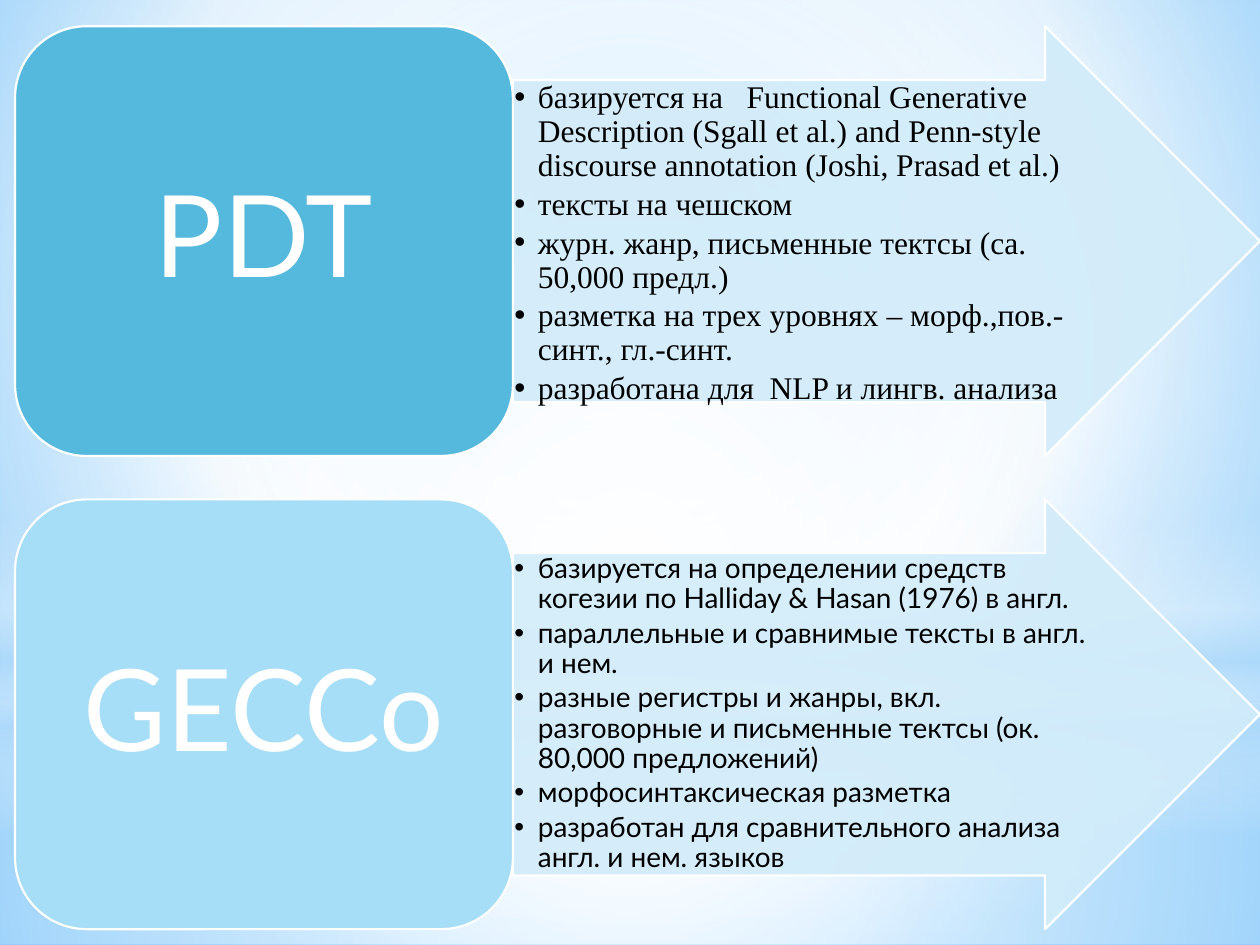
from lxml.etree import SubElement
from pptx import Presentation
from pptx.dml.color import RGBColor
from pptx.enum.shapes import MSO_SHAPE
from pptx.enum.text import MSO_ANCHOR, MSO_AUTO_SIZE, PP_ALIGN
from pptx.oxml.ns import qn
from pptx.util import Pt

COLORS = {
    "white": "FFFFFF", "black": "000000", "pale": "B4DCFA",
    "sky": "9ED5FF", "edge": "5BB9FF", "arrow": "D2ECFA",
    "teal": "55B9DD", "light": "A6DDF7",
}
CENTER = (50, 50, 50, 50)

# Background layers: preset, box, stops (position, colour, opacity), focus
LAYERS = [
    (MSO_SHAPE.RECTANGLE, (0, 402, 720, 138),
     [(0, "white", 91), (37, "white", 76), (100, "pale", 79)], CENTER),
    (MSO_SHAPE.RECTANGLE, (0, 0, 720, 402),
     [(0, "white", 89), (48, "white", 62), (100, "pale", 79)], CENTER),
    (MSO_SHAPE.RECTANGLE, (0, 296.6, 720, 180),
     [(0, "white", 0), (29, "white", 30), (45, "pale", 40),
      (55, "white", 26), (65, "pale", 60), (100, "white", 0)], None),
    (MSO_SHAPE.OVAL, (0, 126, 720, 402),
     [(0, "white", 100), (56, "white", 0)], CENTER),
]

# Corpora: name, tile colour, list font, list size, label and list placeholders
CORPORA = [
    ("PDT", "teal", "Times New Roman", 18, 1, 2, [
        "базируется на   Functional Generative Description (Sgall et al.) "
        "and Penn-style discourse annotation (Joshi, Prasad et al.)",
        "тексты на чешском",
        "журн. жанр, письменные тектсы (ca. 50,000 предл.)",
        "разметка на трех уровнях – морф.,пов.-синт., гл.-синт.",
        "разработана для  NLP и лингв. анализа",
    ]),
    ("GECCo", "light", "Lato", 16, 3, 4, [
        "базируется на определении средств когезии по Halliday & Hasan "
        "(1976) в англ.",
        "параллельные и сравнимые тексты в англ. и нем.",
        "разные регистры и жанры, вкл. разговорные и письменные тектсы "
        "(ок. 80,000 предложений)",
        "морфосинтаксическая разметка",
        "разработан для сравнительного анализа англ. и нем. языков",
    ]),
]
ROW_TOP, ROW_PITCH, ROW_HEIGHT = 15, 270.4, 245.6
TILE_LEFT, TILE_WIDTH, TILE_MARGIN = 8.6, 284.5, 12
ARROW_LEFT, ARROW_WIDTH = 293.1, 426.9
LIST_OFFSET, LIST_WIDTH, LIST_HEIGHT = 30.7, 335, 184.2


def rgb(color):
    return RGBColor.from_string(COLORS[color])


def set_opacity(color_element, percent):
    SubElement(color_element, qn("a:alpha"), val=str(percent * 1000))


def set_gradient(fill, owner, stops, focus):
    """Give a radial gradient around focus, or a vertical one without it."""
    fill.gradient()
    gradient = next(owner.iter(qn("a:gradFill")))
    for child in list(gradient):
        gradient.remove(child)
    stop_list = SubElement(gradient, qn("a:gsLst"))
    for position, color, opacity in stops:
        stop = SubElement(stop_list, qn("a:gs"), pos=str(position * 1000))
        set_opacity(SubElement(stop, qn("a:srgbClr"), val=COLORS[color]), opacity)
    if focus:
        radial = SubElement(gradient, qn("a:path"), path="circle")
        sides = {side: str(value * 1000) for side, value in zip("ltrb", focus)}
        SubElement(radial, qn("a:fillToRect"), **sides)
    else:
        SubElement(gradient, qn("a:lin"), ang="5400000", scaled="0")


def add_plain_shape(slide, preset, box):
    shape = slide.shapes.add_shape(preset, *map(Pt, box))
    shape.shadow.inherit = False
    shape.line.fill.background()
    return shape


def add_outlined_shape(slide, preset, box, color):
    shape = add_plain_shape(slide, preset, box)
    shape.fill.solid()
    shape.fill.fore_color.rgb = rgb(color)
    shape.line.color.rgb = rgb("white")
    shape.line.width = Pt(1.25)
    return shape


def add_arrow(slide, top):
    box = (ARROW_LEFT, top, ARROW_WIDTH, ROW_HEIGHT)
    arrow = add_outlined_shape(slide, MSO_SHAPE.RIGHT_ARROW, box, "arrow")
    arrow.adjustments[0] = 0.75
    arrow.adjustments[1] = 0.5
    set_opacity(next(arrow._element.spPr.iter(qn("a:srgbClr"))), 90)


def place_text(slide, index, box, margins, anchor):
    """Move a placeholder to the front and to its box; return its text frame."""
    placeholder = next(item for item in slide.placeholders
                       if item.placeholder_format.idx == index)
    slide.shapes._spTree.append(placeholder._element)
    placeholder.left, placeholder.top, placeholder.width, placeholder.height = map(Pt, box)
    frame = placeholder.text_frame
    frame.word_wrap = True
    frame.auto_size = MSO_AUTO_SIZE.NONE
    frame.vertical_anchor = anchor
    horizontal, vertical = map(Pt, margins)
    frame.margin_left = frame.margin_right = horizontal
    frame.margin_top = frame.margin_bottom = vertical
    return frame


def write_paragraph(paragraph, text, font, size, color, alignment, gap):
    paragraph.alignment = alignment
    paragraph.line_spacing = 0.9
    paragraph.space_before = Pt(0)
    paragraph.space_after = Pt(gap)
    run = paragraph.add_run()
    run.text = text
    run.font.name = font
    run.font.size = Pt(size)
    run.font.bold = False
    run.font.color.rgb = rgb(color)


def set_bullet(paragraph):
    properties = paragraph._p.get_or_add_pPr()
    properties.set("marL", str(Pt(13.5)))
    properties.set("indent", str(-Pt(13.5)))
    SubElement(properties, qn("a:buChar"), char="•")


def add_label(slide, index, top, name):
    box = (TILE_LEFT + TILE_MARGIN, top + TILE_MARGIN,
           TILE_WIDTH - 2 * TILE_MARGIN, ROW_HEIGHT - 2 * TILE_MARGIN)
    frame = place_text(slide, index, box, (19.5, 9.75), MSO_ANCHOR.MIDDLE)
    write_paragraph(frame.paragraphs[0], name, "Lato", 65, "white", PP_ALIGN.CENTER, 0)


def add_list(slide, index, top, items, font, size):
    box = (ARROW_LEFT, top + LIST_OFFSET, LIST_WIDTH, LIST_HEIGHT)
    frame = place_text(slide, index, box, (0.8, 0.8), MSO_ANCHOR.TOP)
    for number, item in enumerate(items):
        paragraph = frame.add_paragraph() if number else frame.paragraphs[0]
        write_paragraph(paragraph, item, font, size, "black", PP_ALIGN.LEFT, size * 0.15)
        set_bullet(paragraph)


def add_background(slide):
    stops = [(0, "sky", 100), (60, "white", 100), (100, "edge", 100)]
    set_gradient(slide.background.fill, slide._element, stops, (20, 10, 20, 60))
    for preset, box, layer_stops, focus in LAYERS:
        layer = add_plain_shape(slide, preset, box)
        set_gradient(layer.fill, layer._element, layer_stops, focus)


def main():
    presentation = Presentation()
    presentation.slide_width, presentation.slide_height = Pt(720), Pt(540)
    slide = presentation.slides.add_slide(presentation.slide_layouts[4])
    title = slide.shapes.title._element
    title.getparent().remove(title)
    add_background(slide)
    for row, (name, color, font, size, label, body, items) in enumerate(CORPORA):
        top = ROW_TOP + row * ROW_PITCH
        add_arrow(slide, top)
        add_list(slide, body, top, items, font, size)
        tile = (TILE_LEFT, top, TILE_WIDTH, ROW_HEIGHT)
        add_outlined_shape(slide, MSO_SHAPE.ROUNDED_RECTANGLE, tile, color)
        add_label(slide, label, top, name)
    presentation.save("out.pptx")


if __name__ == "__main__":
    main()
